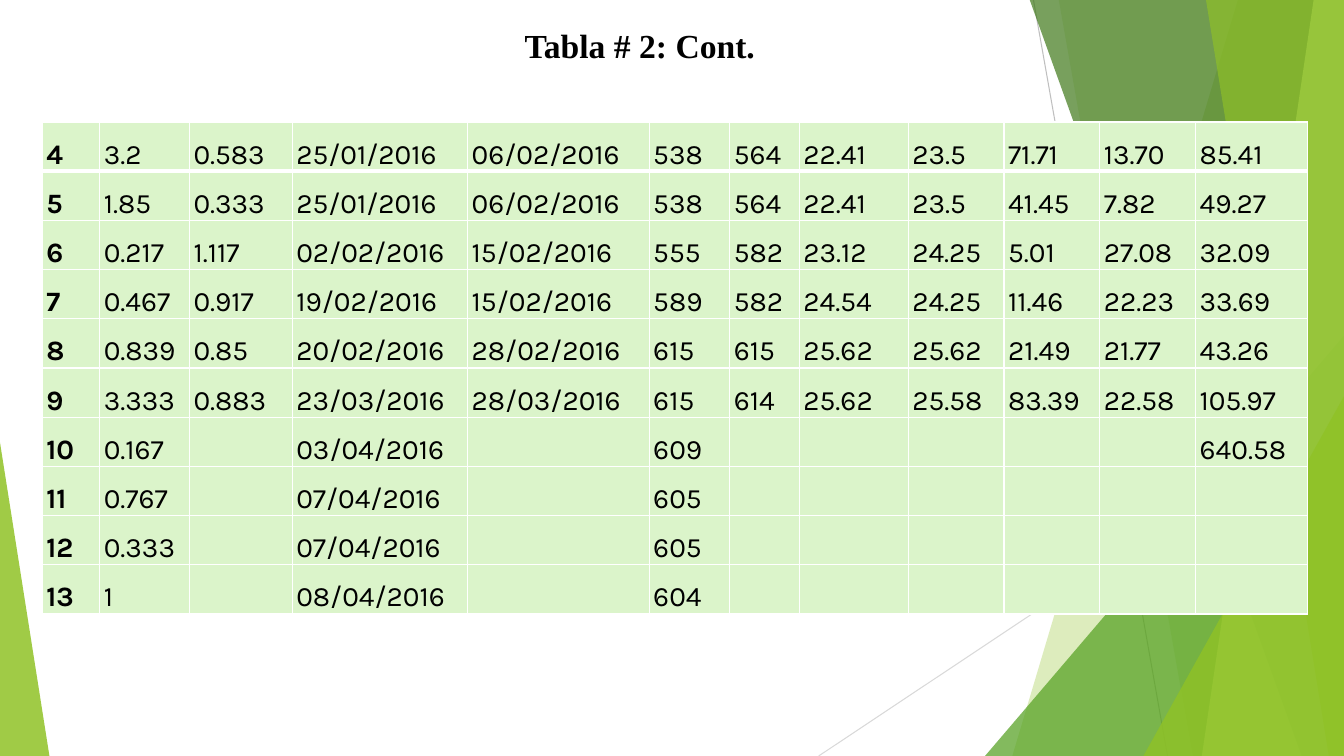
from lxml import etree
from pptx import Presentation
from pptx.dml.color import RGBColor
from pptx.enum import shapes, text
from pptx.oxml import ns
from pptx.util import Inches, Pt

BLACK = RGBColor(0x00, 0x00, 0x00)
MINT = RGBColor(0xDB, 0xF4, 0xCA)
LIME = RGBColor(0x90, 0xC2, 0x26)
PALE = RGBColor(0xC0, 0xE4, 0x74)
GREEN = RGBColor(0x54, 0xA0, 0x21)
DARK = RGBColor(0x3F, 0x78, 0x19)
GREY = RGBColor(0xBF, 0xBF, 0xBF)
SILVER = RGBColor(0xD9, 0xD9, 0xD9)

WIDE, HIGH = 13.33, 7.5
TITLE = "Tabla # 2: Cont."
ROWS = [
    ("4", "3.2", "0.583", "25/01/2016", "06/02/2016", "538", "564", "22.41", "23.5", "71.71", "13.70", "85.41"),
    ("5", "1.85", "0.333", "25/01/2016", "06/02/2016", "538", "564", "22.41", "23.5", "41.45", "7.82", "49.27"),
    ("6", "0.217", "1.117", "02/02/2016", "15/02/2016", "555", "582", "23.12", "24.25", "5.01", "27.08", "32.09"),
    ("7", "0.467", "0.917", "19/02/2016", "15/02/2016", "589", "582", "24.54", "24.25", "11.46", "22.23", "33.69"),
    ("8", "0.839", "0.85", "20/02/2016", "28/02/2016", "615", "615", "25.62", "25.62", "21.49", "21.77", "43.26"),
    ("9", "3.333", "0.883", "23/03/2016", "28/03/2016", "615", "614", "25.62", "25.58", "83.39", "22.58", "105.97"),
    ("10", "0.167", "", "03/04/2016", "", "609", "", "", "", "", "", "640.58"),
    ("11", "0.767", "", "07/04/2016", "", "605", "", "", "", "", "", ""),
    ("12", "0.333", "", "07/04/2016", "", "605", "", "", "", "", "", ""),
    ("13", "1", "", "08/04/2016", "", "604", "", "", "", "", "", ""),
]
COLS = [0.57, 0.89, 1.02, 1.74, 1.8, 0.8, 0.69, 1.08, 0.95, 0.95, 0.95, 1.11]
ROW = 0.48
LINES = [(10.25, 0, 11.58, HIGH, GREY), (WIDE, 4.03, 8.12, HIGH, SILVER)]
BANDS = [
    ("band", 12.28, 10.04, LIME, 30),
    ("band", 10.5, 11.83, LIME, 20),
    ("peak", (9.77, 3.33, 3.56, 4.17), 1, GREEN, 72),
    ("band", 10.21, 12.91, DARK, 70),
    ("band", 13.03, 11.92, PALE, 70),
    ("band", 11.96, 13.18, LIME, 65),
    ("peak", (11.34, 3.93, 1.99, 3.57), 1, LIME, 80),
    ("peak", (0, 4.39, 0.49, 3.11), 0, LIME, 85),
]


def write(frame, words, font="Karla", size=20, bold=False,
          align=text.PP_ALIGN.JUSTIFY, space=1.5):
    para = frame.paragraphs[0]
    para.alignment = align
    para.line_spacing = space
    run = para.add_run()
    run.text = words
    run.font.name, run.font.size, run.font.bold = font, Pt(size), bold
    run.font.color.rgb = BLACK


def paint(shape, color, alpha):
    shape.shadow.inherit = False
    shape.fill.solid()
    shape.fill.fore_color.rgb = color
    shape.line.fill.background()
    tone = shape.fill._xPr.find(".//" + ns.qn("a:srgbClr"))
    etree.SubElement(tone, ns.qn("a:alpha"), val=str(alpha * 1000))


def band(top, foot):
    edge = [(WIDE, -0.01), (WIDE, HIGH), (foot, HIGH)]
    form = slide.shapes.build_freeform(Inches(top), Inches(-0.01))
    form.add_line_segments([(Inches(x), Inches(y)) for x, y in edge], close=True)
    return form.convert_to_shape()


def peak(box, lean):
    shape = slide.shapes.add_shape(shapes.MSO_SHAPE.ISOSCELES_TRIANGLE, *map(Inches, box))
    shape.adjustments[0] = lean
    return shape


def border(cell, **sides):
    props = cell._tc.get_or_add_tcPr()
    for side, width in sides.items():
        line = etree.SubElement(props, ns.qn("a:ln" + side), w=str(Pt(width)))
        fill = etree.SubElement(line, ns.qn("a:solidFill"))
        etree.SubElement(fill, ns.qn("a:srgbClr"), val="FFFFFF")


deck = Presentation()
deck.slide_width, deck.slide_height = Inches(WIDE), Inches(HIGH)
slide = deck.slides.add_slide(deck.slide_layouts[6])

for *ends, color in LINES:
    line = slide.shapes.add_connector(shapes.MSO_CONNECTOR.STRAIGHT, *map(Inches, ends))
    line.line.color.rgb = color
    line.line.width = Pt(0.75)
    etree.SubElement(line._element.spPr, ns.qn("a:effectLst"))

for kind, first, last, color, alpha in BANDS:
    draw = band if kind == "band" else peak
    paint(draw(first, last), color, alpha)

grid = slide.shapes.add_table(len(ROWS), len(COLS), Inches(0.42), Inches(1.21),
                              Inches(sum(COLS)), Inches(ROW * len(ROWS))).table
grid.first_row = grid.horz_banding = False
for col, width in zip(grid.columns, COLS):
    col.width = Inches(width)
for r, row in enumerate(ROWS):
    grid.rows[r].height = Inches(ROW)
    for c, words in enumerate(row):
        cell = grid.cell(r, c)
        border(cell, L=1, R=1, T=3 if r == 1 else 1, B=3 if r == 0 else 1)
        cell.fill.solid()
        cell.fill.fore_color.rgb = MINT
        cell.vertical_anchor = text.MSO_ANCHOR.BOTTOM
        cell.margin_left = cell.margin_right = Inches(0.04)
        cell.margin_top = cell.margin_bottom = 0
        if words:
            write(cell.text_frame, words, bold=c == 0)

title = slide.shapes.add_textbox(Inches(0.6), Inches(0.2), Inches(11.49), Inches(0.5)).text_frame
title.word_wrap = True
title.vertical_anchor = text.MSO_ANCHOR.MIDDLE
write(title, TITLE, font="Times New Roman", size=24, bold=True,
      align=text.PP_ALIGN.CENTER, space=1)

deck.save("out.pptx")
